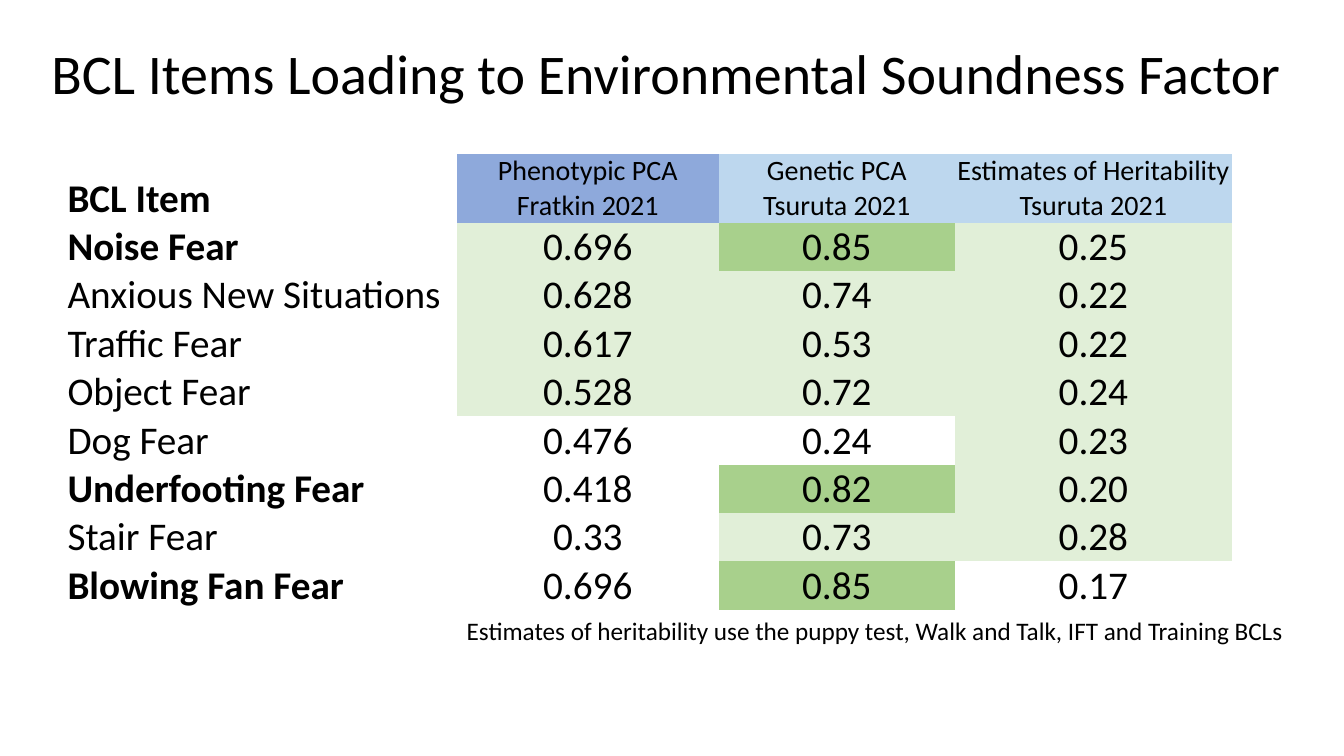
from pptx import Presentation
from pptx.dml.color import RGBColor
from pptx.enum.text import MSO_ANCHOR, PP_ALIGN
from pptx.util import Inches, Pt

TITLE = "BCL Items Loading to Environmental Soundness Factor"
FOOTNOTE = "Estimates of heritability use the puppy test, Walk and Talk, IFT and Training BCLs"
HEADINGS = [
    ("BCL Item", None),
    ("Phenotypic PCA\nFratkin 2021", "phenotypic"),
    ("Genetic PCA\nTsuruta 2021", "genetic"),
    ("Estimates of Heritability\nTsuruta 2021", "genetic"),
]
# item, then (value, shade) for each study
ITEMS = [
    ("Noise Fear", ("0.696", "notable"), ("0.85", "strong"), ("0.25", "notable")),
    ("Anxious New Situations", ("0.628", "notable"), ("0.74", "notable"), ("0.22", "notable")),
    ("Traffic Fear", ("0.617", "notable"), ("0.53", "notable"), ("0.22", "notable")),
    ("Object Fear", ("0.528", "notable"), ("0.72", "notable"), ("0.24", "notable")),
    ("Dog Fear", ("0.476", None), ("0.24", None), ("0.23", "notable")),
    ("Underfooting Fear", ("0.418", None), ("0.82", "strong"), ("0.20", "notable")),
    ("Stair Fear", ("0.33", None), ("0.73", "notable"), ("0.28", "notable")),
    ("Blowing Fan Fear", ("0.696", None), ("0.85", "strong"), ("0.17", None)),
]

THEME = {
    "font": "Calibri",
    "text": "000000",
    "sizes": {"title": 40, "body": 28, "heading": 20, "footnote": 18},
    "fills": {"phenotypic": "8EA9DB", "genetic": "BDD7EE",
              "notable": "E1EFD8", "strong": "A8D08C"},
}
NO_STYLE_NO_GRID = "{2D5ABB26-0587-4C30-8999-92F81FD0307C}"

SLIDE_SIZE = (13.33, 7.5)
TITLE_BOX = (0.41, 0.33, 12.52, 0.77)
TABLE_LEFT, TABLE_TOP = 0.67, 1.53
COLUMN_WIDTHS = (3.86, 2.6, 2.34, 2.75)
ROW_HEIGHTS = [0.68] + [0.48] * len(ITEMS)
TABLE_BOTTOM = TABLE_TOP + sum(ROW_HEIGHTS)
FOOTNOTE_BOX = (TABLE_LEFT + COLUMN_WIDTHS[0], TABLE_BOTTOM + 0.01, 8.39, 0.4)


def write(frame, text, role, align=PP_ALIGN.LEFT, bold=False):
    frame.text = text
    frame.word_wrap = True
    font_format = {"name": THEME["font"], "size": Pt(THEME["sizes"][role]), "bold": bold}
    for paragraph in frame.paragraphs:
        paragraph.alignment = align
        for run in paragraph.runs:
            for attribute, value in font_format.items():
                setattr(run.font, attribute, value)
            run.font.color.rgb = RGBColor.from_string(THEME["text"])


def fill_cell(cell, text, shade, role, align, bold):
    cell.margin_left = cell.margin_right = cell.margin_top = cell.margin_bottom = 0
    cell.vertical_anchor = MSO_ANCHOR.BOTTOM
    if shade:
        cell.fill.solid()
        cell.fill.fore_color.rgb = RGBColor.from_string(THEME["fills"][shade])
    else:
        cell.fill.background()
    write(cell.text_frame, text, role, align, bold)


def add_loadings(slide):
    rows = [HEADINGS] + [[(item, None), *values] for item, *values in ITEMS]
    box = (TABLE_LEFT, TABLE_TOP, sum(COLUMN_WIDTHS), sum(ROW_HEIGHTS))
    frame = slide.shapes.add_table(len(rows), len(COLUMN_WIDTHS), *map(Inches, box))
    loadings = frame.table
    loadings.first_row = loadings.horz_banding = False
    loadings._tbl.tblPr[0].text = NO_STYLE_NO_GRID
    for column, width in zip(loadings.columns, COLUMN_WIDTHS):
        column.width = Inches(width)
    for row, height in zip(loadings.rows, ROW_HEIGHTS):
        row.height = Inches(height)
    for r, row in enumerate(rows):
        strong = any(shade == "strong" for _, shade in row)
        for c, (text, shade) in enumerate(row):
            fill_cell(loadings.cell(r, c), text, shade,
                      role="heading" if r == 0 and c else "body",
                      align=PP_ALIGN.CENTER if c else PP_ALIGN.LEFT,
                      bold=c == 0 and (r == 0 or strong))


def main():
    deck = Presentation()
    deck.slide_width, deck.slide_height = map(Inches, SLIDE_SIZE)
    slide = deck.slides.add_slide(deck.slide_layouts[5])

    title = slide.shapes.title
    title.left, title.top, title.width, title.height = map(Inches, TITLE_BOX)
    title.text_frame.vertical_anchor = MSO_ANCHOR.TOP
    write(title.text_frame, TITLE, "title")

    add_loadings(slide)

    footnote = slide.shapes.add_textbox(*map(Inches, FOOTNOTE_BOX))
    write(footnote.text_frame, FOOTNOTE, "footnote")
    deck.save("out.pptx")


if __name__ == "__main__":
    main()
